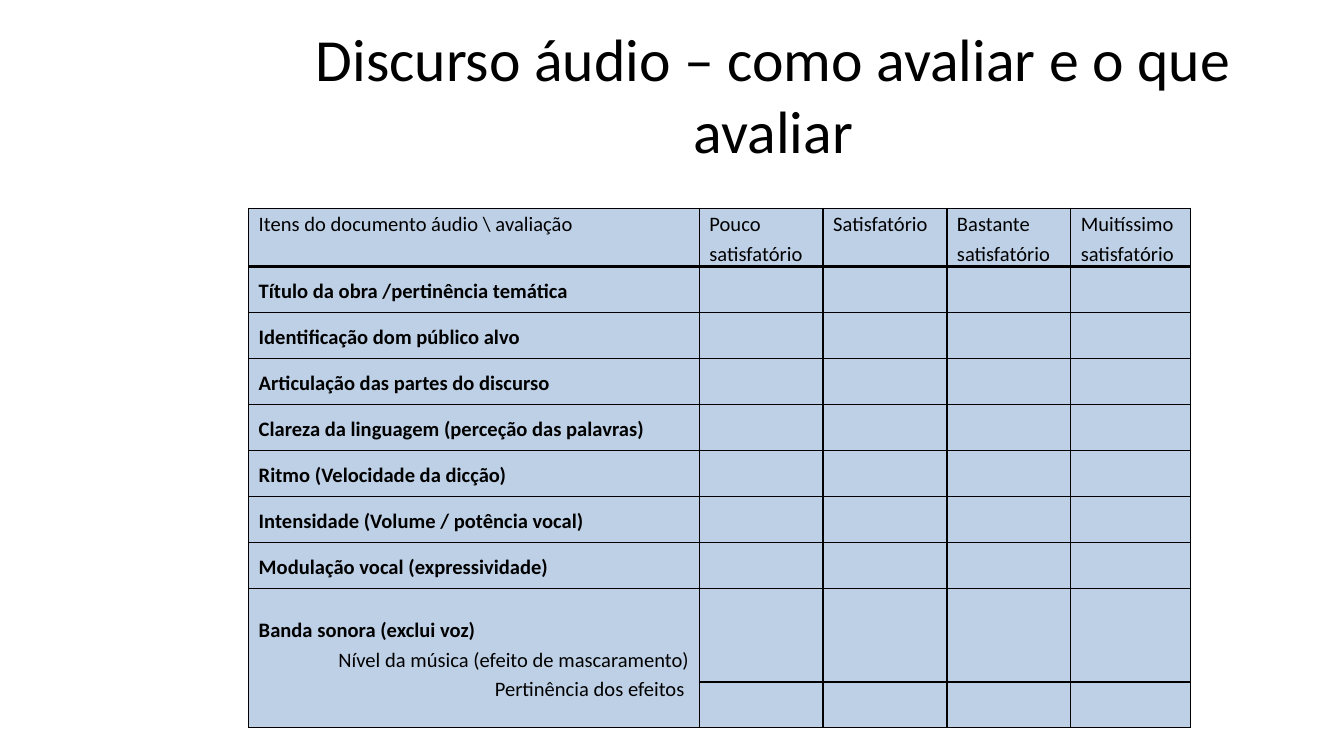
from pptx import Presentation
from pptx.dml.color import RGBColor
from pptx.enum.text import MSO_ANCHOR as Anchor, PP_ALIGN as Align
from pptx.oxml.ns import qn
from pptx.util import Cm, Pt
from lxml.etree import SubElement

BLACK = RGBColor(0x00, 0x00, 0x00)
BLUE = RGBColor(0x4F, 0x81, 0xBD)
FONT = "Calibri"

TITLE = "Discurso áudio – como avaliar e o que avaliar"
HEADERS = ["Itens do documento áudio \\ avaliação", "Pouco satisfatório", "Satisfatório",
           "Bastante satisfatório", "Muitíssimo satisfatório"]
ITEMS = ["Título da obra /pertinência temática", "Identificação dom público alvo",
         "Articulação das partes do discurso", "Clareza da linguagem (perceção das palavras)",
         "Ritmo (Velocidade da dicção)", "Intensidade (Volume / potência vocal)",
         "Modulação vocal (expressividade)"]
SOUNDTRACK = ["Banda sonora (exclui voz)", "Nível da música (efeito de mascaramento)",
              "Pertinência dos efeitos "]
COL_SHARES = [3.35, 0.92, 0.92, 0.92, 0.89]
ROW_SHARES = [0.43] + [0.34] * len(ITEMS) + [0.69, 0.34]


def style_runs(p, size, bold=False):
    """Set the font of every run in a paragraph."""
    for r in p.runs:
        r.font.name, r.font.size, r.font.bold = FONT, Pt(size), bold
        r.font.color.rgb = BLACK


def style_cell(cell, top, bottom):
    """Give a cell its margins, black borders and translucent blue fill."""
    cell.margin_left = cell.margin_right = Cm(0.19)
    cell.margin_top = cell.margin_bottom = 0
    tc_pr = cell._tc.get_or_add_tcPr()
    for side, width in (("L", 1), ("R", 1), ("T", top), ("B", bottom)):
        ln = SubElement(tc_pr, qn(f"a:ln{side}"), w=str(Pt(width)))
        SubElement(SubElement(ln, qn("a:solidFill")), qn("a:srgbClr"), val=str(BLACK))
    cell.fill.solid()
    cell.fill.fore_color.rgb = BLUE
    color = tc_pr.find(qn("a:solidFill")).find(qn("a:srgbClr"))
    SubElement(color, qn("a:alpha"), val="37000")


def write_cell(cell, lines, bold):
    """Write a left-aligned first line and right-aligned plain detail lines."""
    tf = cell.text_frame
    tf.text = "\n".join(lines)
    for i, p in enumerate(tf.paragraphs):
        p.line_spacing = 1.15
        p.alignment = Align.RIGHT if i else Align.LEFT
        style_runs(p, 11, bold and i == 0)


def add_title(s, left, top, width, height):
    """Place the centred slide title in its box."""
    tf = s.shapes.add_textbox(left, top, width, height).text_frame
    tf.word_wrap = True
    tf.vertical_anchor = Anchor.MIDDLE
    tf.text = TITLE
    p = tf.paragraphs[0]
    p.alignment = Align.CENTER
    style_runs(p, 32)


def add_evaluation_table(s, left, top, width, height):
    """Place the evaluation grid in its box."""
    table = s.shapes.add_table(len(ROW_SHARES), len(COL_SHARES), left, top, width, height).table
    table.first_row = table.horz_banding = False
    for col, share in zip(table.columns, COL_SHARES):
        col.width = int(width * share / sum(COL_SHARES))
    for row, share in zip(table.rows, ROW_SHARES):
        row.height = int(height * share / sum(ROW_SHARES))
    for i, row in enumerate(table.rows):
        for cell in row.cells:
            style_cell(cell, 1.5 if i == 1 else 1, 1.5 if i == 0 else 1)
    for j, header in enumerate(HEADERS):
        write_cell(table.cell(0, j), [header], False)
    for i, lines in enumerate([[item] for item in ITEMS] + [SOUNDTRACK], start=1):
        cell = table.cell(i, 0)
        cell.vertical_anchor = Anchor.MIDDLE
        write_cell(cell, lines, True)
    last = len(ROW_SHARES) - 1
    table.cell(last - 1, 0).merge(table.cell(last, 0))


def main():
    """Build and save the slide."""
    prs = Presentation()
    prs.slide_width, prs.slide_height = Cm(25.4), Cm(14.29)
    s = prs.slides.add_slide(prs.slide_layouts[6])
    add_title(s, Cm(5.11), Cm(0.58), Cm(19.02), Cm(2.39))
    add_evaluation_table(s, Cm(4.7), Cm(3.94), Cm(17.8), Cm(9.82))
    prs.save("out.pptx")


if __name__ == "__main__":
    main()
